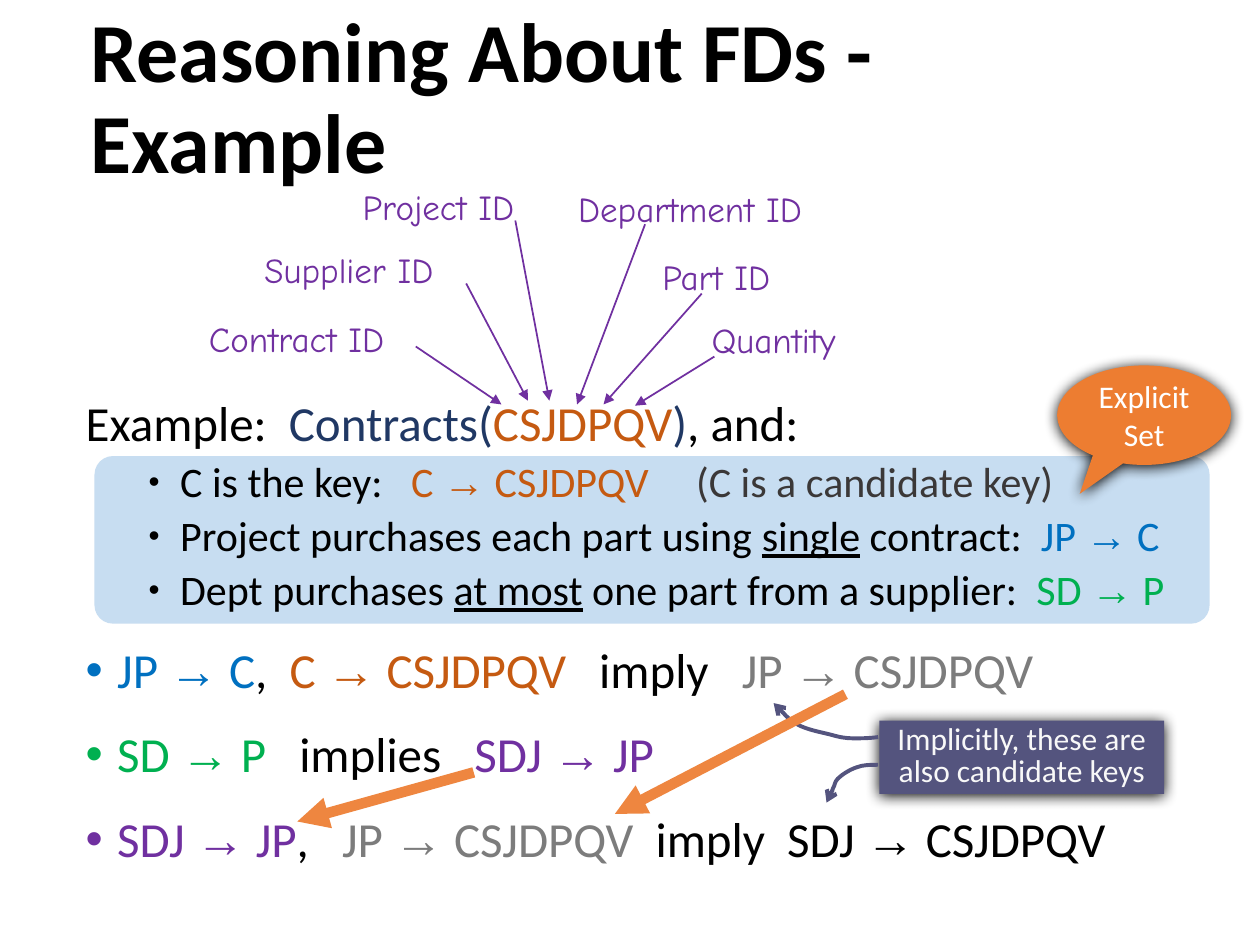
from lxml.etree import SubElement
from pptx import Presentation
from pptx.dml.color import RGBColor
from pptx.enum.shapes import MSO_CONNECTOR as Connector, MSO_SHAPE as Preset
from pptx.enum.text import MSO_ANCHOR as Anchor, MSO_AUTO_SIZE as AutoSize, PP_ALIGN as Align
from pptx.oxml.ns import qn
from pptx.util import Inches, Pt

CELL = Inches(0.1)  # the slide is a grid of 100 columns by 75 rows
COLORS = {
    "black": "000000", "white": "FFFFFF", "pale": "F8F8F8", "panel": "C7DDF1",
    "navy": "203864", "rust": "C55A11", "charcoal": "3B3838", "blue": "0070C0",
    "green": "00B050", "gray": "7C7C7C", "purple": "7030A0", "slate": "54547E",
    "arrow": "EE8640", "orange": "ED7D31",
}
BODY_FONT, ARROW_FONT, LABEL_FONT = "Calibri", "Times New Roman", "Comic Neue"

# Each run is (text, colour) or (text, colour, underlined).
HEADING = [("Example:  ", "black"), ("Contracts(", "navy"), ("CSJDPQV", "rust"),
           (")", "navy"), (", and:", "black")]
GIVEN_FACTS = [
    [("C is the key:   ", "black"), ("C → CSJDPQV     ", "rust"),
     ("(C is a candidate key)", "charcoal")],
    [("Project purchases each part using ", "black"), ("single", "black", True),
     (" contract:  ", "black"), ("JP → C", "blue")],
    [("Dept purchases ", "black"), ("at most", "black", True),
     (" one part from a supplier:  ", "black"), ("SD → P", "green")],
]
DEDUCTIONS = [
    [("JP → C", "blue"), (",  ", "black"), ("C → CSJDPQV   ", "rust"),
     ("imply   ", "black"), ("JP → CSJDPQV", "gray")],
    [("SD → P   ", "green"), ("implies   ", "black"), ("SDJ → JP", "purple")],
    [("SDJ → JP", "purple"), (",   ", "black"), ("JP → CSJDPQV  ", "gray"),
     ("imply  SDJ → CSJDPQV", "black")],
]
# Label, its box, then the ends of its arrow.
ATTRIBUTES = [
    ("Contract ID", (15.6, 24.7, 19.1, 4.3), (33, 27.5), (39.8, 32.1)),
    ("Supplier ID", (20, 19.2, 19.6, 4.3), (37, 22.5), (41.9, 31.8)),
    ("Project ID", (27.8, 14.2, 16.6, 4.3), (40.9, 17.5), (43.6, 31.8)),
    ("Department ID", (44.9, 14.4, 24.1, 4.3), (51.2, 17.8), (45.8, 32.1)),
    ("Part ID", (51.6, 19.8, 13, 4.3), (55.7, 23.3), (47.9, 32.1)),
    ("Quantity", (55.5, 24.8, 15.6, 4.3), (56.7, 28.3), (50.4, 32.2)),
]
DEDUCTION_ARROWS = [((67.1, 55.1), (48.8, 64.6)), ((37.6, 61.3), (23.6, 65.2))]
# A start point, then three Bezier points for each segment.
KEY_POINTERS = [
    [(69.7, 58.5), (69, 58.6), (68.3, 58.6), (67.7, 58.6), (67.1, 58.6), (66.6, 58.5),
     (65.9, 58.3), (65.1, 58.1), (64, 57.9), (63.3, 57.5), (62.6, 57.1), (62, 56.4),
     (61.4, 55.8)],
    [(69.7, 60.7), (69.1, 60.7), (68.5, 60.7), (68, 60.9), (67.4, 61.1), (66.8, 61.5),
     (66.5, 61.8), (66.2, 62.1), (66.3, 62.3), (66.1, 62.6), (66, 63), (65.8, 63.3),
     (65.6, 63.7)],
]


def grid(*cells):
    return [round(cell * CELL) for cell in cells]


def color(name):
    return RGBColor.from_string(COLORS[name])


def add_run(paragraph, text, color_name, size, font=BODY_FONT, bold=None, underline=None):
    run = paragraph.add_run()
    run.text = text
    run.font.name, run.font.size = font, Pt(size)
    run.font.bold, run.font.underline = bold, underline
    run.font.color.rgb = color(color_name)


def add_formula_run(paragraph, size, text, color_name, underline=None):
    """Add text, setting each → in the arrow font."""
    for index, part in enumerate(text.split("→")):
        if index:
            add_run(paragraph, "→", color_name, size, ARROW_FONT)
        add_run(paragraph, part, color_name, size, underline=underline)


def place(shape, *cells):
    shape.left, shape.top, shape.width, shape.height = grid(*cells)


def fill_title(title):
    place(title, 6.2, 2.6, 86.2, 10.8)
    frame = title.text_frame
    frame.auto_size, frame.vertical_anchor = AutoSize.NONE, Anchor.MIDDLE
    paragraph = frame.paragraphs[0]
    paragraph.alignment, paragraph.line_spacing = Align.LEFT, 0.9
    add_run(paragraph, "Reasoning About FDs - Example", "black", 48, bold=True)


def format_list_item(paragraph, level, space_before, indent, bullet_size):
    """Set spacing and indent; a bullet size of None gives no bullet."""
    paragraph.level, paragraph.line_spacing = level, 0.9
    paragraph.space_before = Pt(space_before)
    properties = paragraph._p.get_or_add_pPr()
    properties.set("marL", str(Inches(indent)))
    properties.set("indent", str(-Inches(0.25)))
    if bullet_size is None:
        SubElement(properties, qn("a:buNone"))
        return
    SubElement(properties, qn("a:buSzPct"), val=str(bullet_size * 1000))
    SubElement(properties, qn("a:buFont"), typeface="Arial")
    SubElement(properties, qn("a:buChar"), char="•")


def fill_body(body):
    place(body, 5.8, 31.2, 90.8, 39.8)
    frame = body.text_frame
    frame.auto_size = AutoSize.NONE
    sections = [([HEADING], 28, (0, 10, 0.25, None)),
                (GIVEN_FACTS, 24, (1, 5, 0.75, 75)),
                (DEDUCTIONS, 28, (0, 18, 0.25, 100))]
    paragraph = frame.paragraphs[0]
    for items, size, style in sections:
        for runs in items:
            paragraph = paragraph if runs is HEADING else frame.add_paragraph()
            format_list_item(paragraph, *style)
            for run in runs:
                add_formula_run(paragraph, size, *run)


def add_filled_shape(shapes, preset, cells, fill, adjustments=()):
    shape = shapes.add_shape(preset, *grid(*cells))
    for index, value in enumerate(adjustments):
        shape.adjustments[index] = value
    shape.fill.solid()
    shape.fill.fore_color.rgb = color(fill)
    shape.line.fill.background()
    shape.shadow.inherit = False
    return shape


def add_glow_shadow(shape):
    effects = shape.element.spPr.find(qn("a:effectLst"))
    shadow = SubElement(effects, qn("a:outerShdw"), blurRad=str(Pt(8.5)), dist=str(Pt(1)),
                        dir="5400000", algn="ctr", rotWithShape="0")
    SubElement(shadow, qn("a:srgbClr"), val=COLORS["black"])


def add_note(shapes, preset, cells, fill, text, text_color, adjustments=()):
    shape = add_filled_shape(shapes, preset, cells, fill, adjustments)
    add_glow_shadow(shape)
    frame = shape.text_frame
    frame.word_wrap, frame.vertical_anchor = True, Anchor.MIDDLE
    paragraph = frame.paragraphs[0]
    paragraph.alignment = Align.CENTER
    add_run(paragraph, text, text_color, 18)
    return shape


def style_line(line_shape, color_name, width, head):
    line_shape.line.color.rgb = color(color_name)
    line_shape.line.width = Pt(width)
    SubElement(line_shape.line._get_or_add_ln(), qn("a:tailEnd"), type=head)


def add_arrow(shapes, start, end, color_name, width):
    arrow = shapes.add_connector(Connector.STRAIGHT, *grid(*start, *end))
    style_line(arrow, color_name, width, "triangle")
    SubElement(arrow.element.spPr, qn("a:effectLst"))


def add_curved_arrow(shapes, points):
    start, *others = [grid(*point) for point in points]
    builder = shapes.build_freeform(*start)
    builder.add_line_segments(others, close=False)
    curve = builder.convert_to_shape()
    outline = next(curve.element.iter(qn("a:path")))
    segments = outline.findall(qn("a:lnTo"))
    for first in range(0, len(segments), 3):
        bezier = SubElement(outline, qn("a:cubicBezTo"))
        for segment in segments[first:first + 3]:
            bezier.append(segment[0])
            outline.remove(segment)
    curve.fill.background()
    style_line(curve, "slate", 2.25, "arrow")
    curve.shadow.inherit = False


def add_label(shapes, text, cells):
    frame = shapes.add_textbox(*grid(*cells)).text_frame
    frame.word_wrap, frame.auto_size = False, AutoSize.SHAPE_TO_FIT_TEXT
    add_run(frame.paragraphs[0], text, "purple", 20, LABEL_FONT)


def add_key_note(shapes):
    note = add_note(shapes, Preset.RECTANGLE, (69.8, 57.2, 22.6, 5.8), "slate",
                    "Implicitly, these are also candidate keys", "pale")
    note.text_frame.margin_left = note.text_frame.margin_right = 0
    note.text_frame.paragraphs[0].line_spacing = Pt(18)
    for points in KEY_POINTERS:
        add_curved_arrow(shapes, points)


def add_attribute_labels(shapes):
    for text, cells, start, end in ATTRIBUTES:
        add_label(shapes, text, cells)
        add_arrow(shapes, start, end, "purple", 1)


def main():
    presentation = Presentation()
    presentation.slide_width, presentation.slide_height = grid(100, 75)
    slide = presentation.slides.add_slide(presentation.slide_layouts[1])
    shapes = slide.shapes
    title, body = slide.placeholders
    fill_title(title)
    fill_body(body)
    panel = add_filled_shape(shapes, Preset.ROUNDED_RECTANGLE, (7.5, 36.2, 88.5, 13.3),
                             "panel", [0.11])
    title.element.addprevious(panel.element)  # behind the text
    add_key_note(shapes.add_group_shape().shapes)
    add_attribute_labels(shapes.add_group_shape().shapes)
    for start, end in DEDUCTION_ARROWS:
        add_arrow(shapes, start, end, "arrow", 6)
    add_note(shapes, Preset.OVAL_CALLOUT, (83.9, 29, 13.8, 7.9), "orange",
             "Explicit Set", "white", [-0.37, 0.79])
    presentation.save("out.pptx")


if __name__ == "__main__":
    main()
